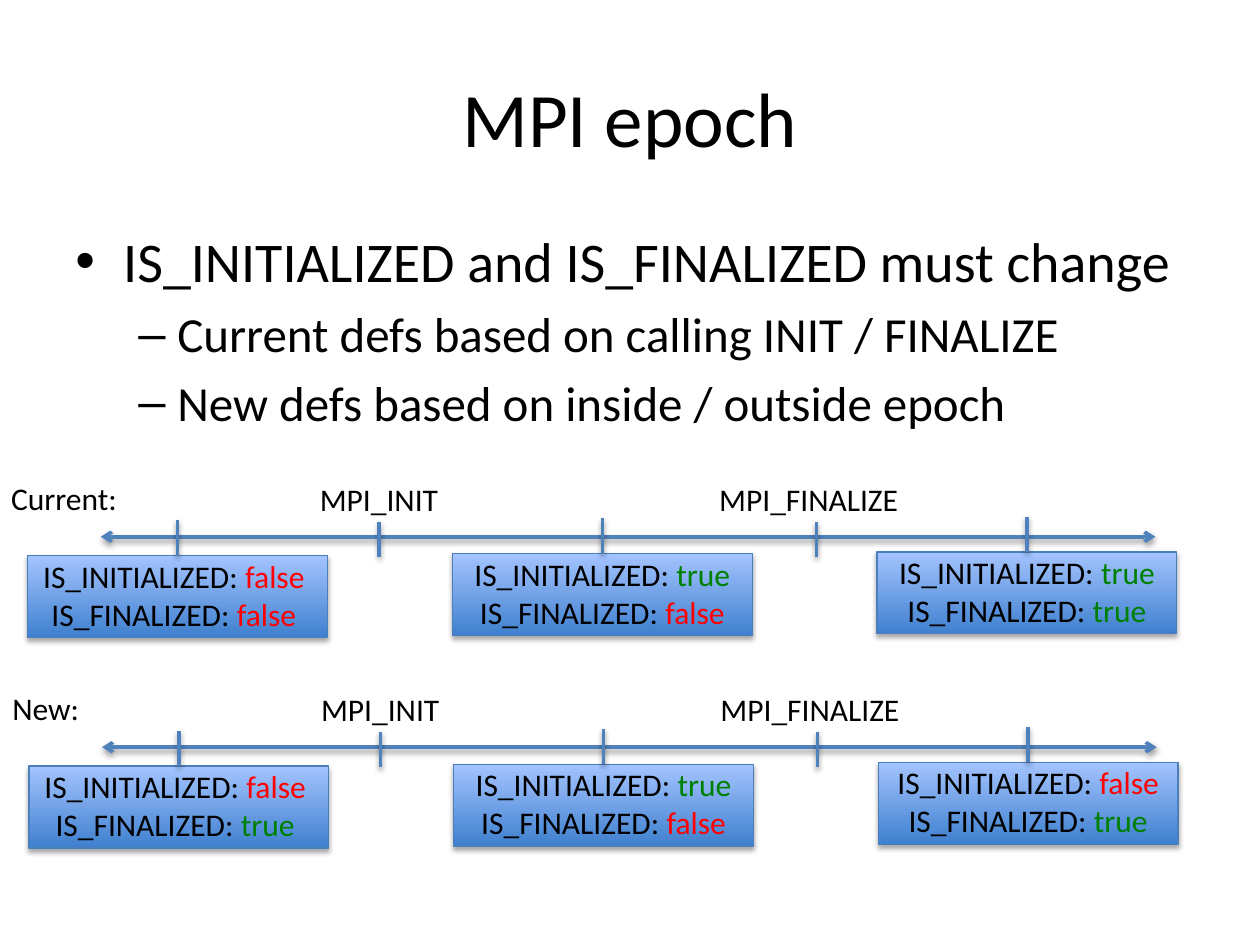
from lxml import etree
from pptx import Presentation, util as u
from pptx.dml.color import RGBColor
from pptx.enum import shapes as sh, text as tx
from pptx.oxml.ns import qn

BLACK = RGBColor(0x00, 0x00, 0x00)
RED = RGBColor(0xFF, 0x00, 0x00)
GREEN = RGBColor(0x00, 0x80, 0x00)
BLUE = RGBColor(0x4F, 0x81, 0xBD)
EDGE = RGBColor(0x4B, 0x7E, 0xBC)
DEEP = RGBColor(0x3F, 0x80, 0xCE)
PALE = RGBColor(0xA4, 0xC4, 0xFF)

WIDTH, HEIGHT = u.Inches(10), u.Inches(7.5)
COL, ROW = WIDTH / 10, HEIGHT / 7.5
TICK = 0.28
POINTS = (
    ("IS_INITIALIZED and IS_FINALIZED must change", 32, "•", 0.38, 0.38),
    ("Current defs based on calling INIT / FINALIZE", 28, "–", 0.81, 0.31),
    ("New defs based on inside / outside epoch", 28, "–", 0.81, 0.31),
)
CALLS = (("MPI_INIT", 3.01, 2.44, 1.16), ("MPI_FINALIZE", 6.48, 5.61, 1.64))
LANES = (
    ("Current:", 1.06, -0.01, 3.75, ((False, False), (True, False), (True, True))),
    ("New:", 0.74, 0, 5.42, ((False, True), (True, False), (False, True))),
)


def grid(left, top, *size):
    """Turn columns and rows into slide lengths."""
    return [round(n * (ROW if i % 2 else COL)) for i, n in enumerate((left, top, *size))]


def style(item, **form):
    for name, value in form.items():
        setattr(item, name, value)


def write(para, words, size, color=BLACK):
    run = para.add_run()
    run.text = words
    style(run.font, size=u.Pt(size), name="Calibri")
    run.font.color.rgb = color


def shade(shape, alpha, dist):
    """Give a shape a soft shadow that falls straight down."""
    props = shape._element.spPr
    for old in props.findall(qn("a:effectLst")):
        props.remove(old)
    effects = etree.SubElement(props, qn("a:effectLst"))
    outer = etree.SubElement(effects, qn("a:outerShdw"), blurRad=str(u.Pt(3.1)),
                             dist=str(u.Pt(dist)), dir="5400000", rotWithShape="0")
    tint = etree.SubElement(outer, qn("a:srgbClr"), val=str(BLACK))
    etree.SubElement(tint, qn("a:alpha"), val=str(alpha * 1000))


def rule(tree, x1, y1, x2, y2, heads=False):
    line = tree.add_connector(sh.MSO_CONNECTOR.STRAIGHT, *grid(x1, y1, x2, y2))
    line.line.width = u.Pt(2)
    line.line.color.rgb = BLUE
    if heads:
        for end in ("a:headEnd", "a:tailEnd"):
            etree.SubElement(line.line._get_or_add_ln(), qn(end), type="arrow")
    shade(line, 38, 1.6)


def label(tree, box, lines, align=tx.PP_ALIGN.LEFT):
    """Write lines, each a list of words and colour, in an unwrapped box."""
    frame = tree.add_textbox(*grid(*box)).text_frame
    style(frame, word_wrap=False, auto_size=tx.MSO_AUTO_SIZE.SHAPE_TO_FIT_TEXT)
    for i, parts in enumerate(lines):
        para = frame.add_paragraph() if i else frame.paragraphs[0]
        para.alignment = align
        for words, color in parts:
            write(para, words, 18, color)


def head(slide, box):
    title = slide.shapes.title
    style(title, **dict(zip(("left", "top", "width", "height"), grid(*box))))
    title.text_frame.vertical_anchor = tx.MSO_ANCHOR.MIDDLE
    para = title.text_frame.paragraphs[0]
    para.alignment = tx.PP_ALIGN.CENTER
    write(para, "MPI epoch", 44)


def body(slide, box):
    frame = slide.shapes.add_textbox(*grid(*box)).text_frame
    frame.word_wrap = True
    for i, (words, size, mark, left, hang) in enumerate(POINTS):
        para = frame.add_paragraph() if i else frame.paragraphs[0]
        para.space_before = u.Pt(size * 0.2)
        props = para._p.get_or_add_pPr()
        props.set("marL", str(u.Inches(left)))
        props.set("indent", str(-u.Inches(hang)))
        etree.SubElement(props, qn("a:buFont"), typeface="Arial")
        etree.SubElement(props, qn("a:buChar"), char=mark)
        write(para, words, size)


def state(slide, box, flags, shift):
    """Draw a gradient box with its two flags and the tick above it."""
    left, top, wide, high = box
    mid = left + wide / 2
    group = slide.shapes.add_group_shape().shapes
    card = group.add_shape(sh.MSO_SHAPE.RECTANGLE, *grid(*box))
    card.fill.gradient()
    card.fill.gradient_angle = 90
    for stop, color in zip(card.fill.gradient_stops, (DEEP, PALE)):
        stop.color.rgb = color
    card.line.width = u.Pt(0.75)
    card.line.color.rgb = EDGE
    shade(card, 35, 1.8)
    lines = [[(f"{name}: ", BLACK), ("true", GREEN) if flag else ("false", RED)]
             for name, flag in zip(("IS_INITIALIZED", "IS_FINALIZED"), flags)]
    span = 2.25 if flags[0] else 2.3
    label(group, (mid - span / 2 + shift, top - 0.04, span, 0.71), lines,
          tx.PP_ALIGN.CENTER)
    rule(group, mid, top - TICK, mid, top)


def lane(slide, name, span, left, top, states):
    """Draw one timeline from its top left corner."""
    tree = slide.shapes
    x, axis = left + 0.01, top + 0.51
    rule(tree, x + 0.8, axis, x + 9.17, axis, heads=True)
    for call, tick, start, wide in CALLS:
        rule(tree, x + tick, axis - 0.12, x + tick, axis - 0.12 + TICK)
        label(tree, (x + start, top + 0.01, wide, 0.4), [[(call, BLACK)]])
    label(tree, (left, top, span, 0.4), [[(name, BLACK)]])
    for i, flags in enumerate(states):
        box = (x + 0.22 + 3.37 * i, axis + 0.15 - 0.015 * i, 2.38, 0.65)
        state(slide, box, flags, 0 if i else -0.03)


def main():
    deck = Presentation()
    style(deck, slide_width=WIDTH, slide_height=HEIGHT)
    slide = deck.slides.add_slide(deck.slide_layouts[5])
    head(slide, (0.5, 0.3, 9, 1.25))
    body(slide, (0.5, 1.75, 9, 4.95))
    for row in LANES:
        lane(slide, *row)
    deck.save("out.pptx")


if __name__ == "__main__":
    main()
